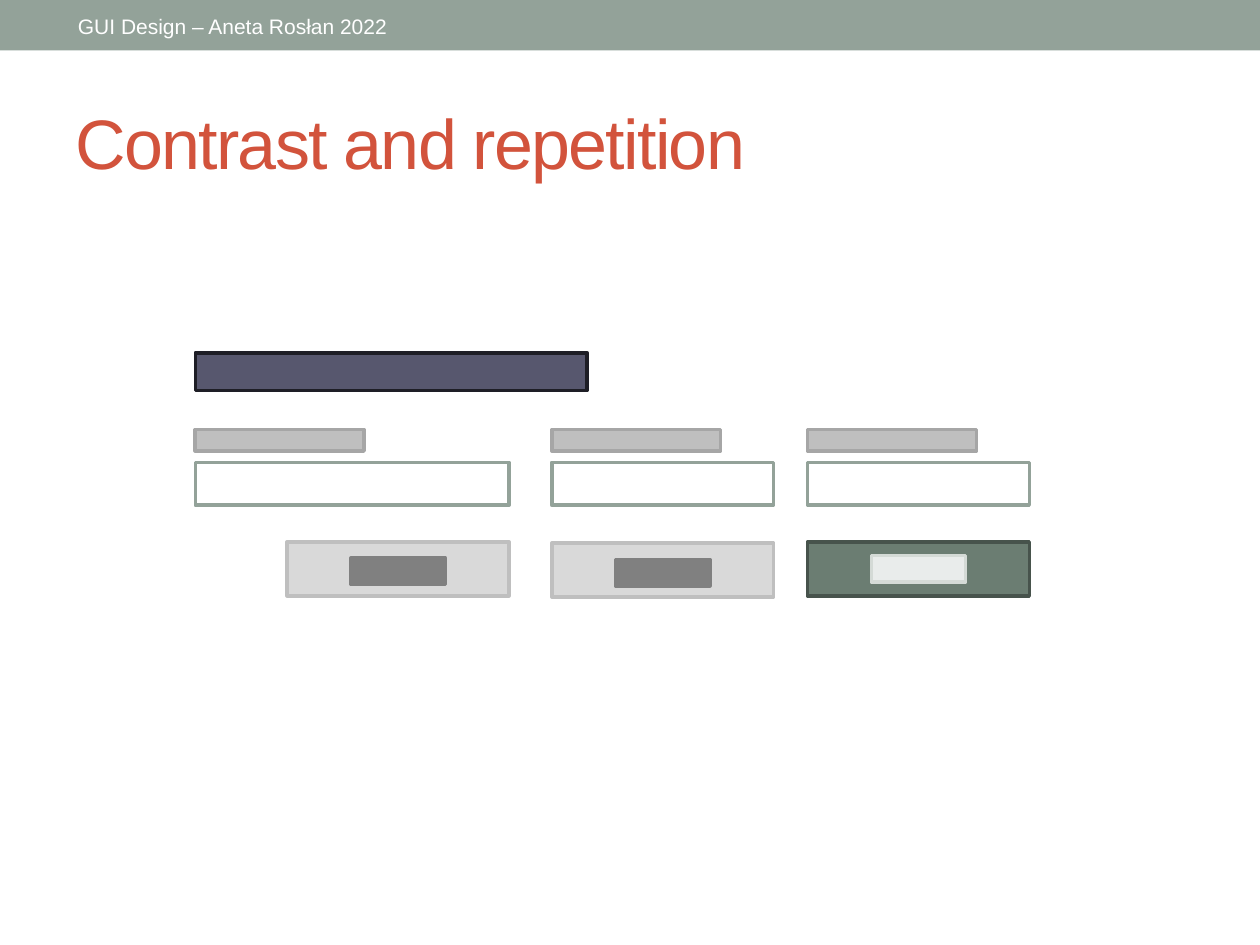
from typing import NamedTuple

from pptx import Presentation
from pptx.dml.color import RGBColor
from pptx.enum.shapes import MSO_SHAPE
from pptx.enum.text import MSO_ANCHOR, PP_ALIGN
from pptx.util import Inches, Pt

RECT = MSO_SHAPE.RECTANGLE
MIDDLE = MSO_ANCHOR.MIDDLE
LEFT = PP_ALIGN.LEFT
TITLE_ONLY = 5
SAGE = "93A299"


class Style(NamedTuple):
    fill: str
    line: str | None = None


class Field(NamedTuple):
    left: float
    width: float


class Button(NamedTuple):
    left: float
    top: float
    label_top: float
    style: Style
    label_style: Style


BAND = Style(SAGE)
HEADING = Style("57576E", "1E1E26")
LABEL = Style("BFBFBF", "A6A6A6")
INPUT = Style("FFFFFF", SAGE)
PLAIN = Style("D9D9D9", "BFBFBF")
PLAIN_LABEL = Style("808080", "808080")
PRIMARY = Style("6B7D72", "47534C")
PRIMARY_LABEL = Style("E9ECEB", "D4DAD6")

BUTTON_W, BUTTON_H = 1.76, 0.43
CAPTION_W, CAPTION_H = 0.75, 0.21

FIELDS = [Field(1.55, 2.49), Field(4.38, BUTTON_W), Field(6.41, BUTTON_W)]
BUTTONS = [
    Button(2.28, 4.3, 4.43, PLAIN, PLAIN_LABEL),
    Button(4.38, 4.31, 4.44, PLAIN, PLAIN_LABEL),
    Button(6.41, 4.3, 4.41, PRIMARY, PRIMARY_LABEL),
]


def rgb(color: str) -> RGBColor:
    return RGBColor.from_string(color)


def add_rect(slide, left: float, top: float, width: float, height: float, style: Style):
    sp = slide.shapes.add_shape(
        RECT, Inches(left), Inches(top), Inches(width), Inches(height)
    )
    sp.shadow.inherit = False
    sp.fill.solid()
    sp.fill.fore_color.rgb = rgb(style.fill)
    if style.line:
        sp.line.color.rgb = rgb(style.line)
        sp.line.width = Pt(2)
    else:
        sp.line.fill.background()
    return sp


def set_text(sp, text: str, size: int, color: str):
    tf = sp.text_frame
    tf.word_wrap = True
    tf.vertical_anchor = MIDDLE
    p = tf.paragraphs[0]
    p.alignment = LEFT
    r = p.add_run()
    r.text = text
    for name, value in {"name": "Arial", "size": Pt(size)}.items():
        setattr(r.font, name, value)
    r.font.color.rgb = rgb(color)
    return r


def add_field(slide, field: Field) -> None:
    add_rect(slide, field.left, 3.67, field.width, 0.34, INPUT)
    add_rect(slide, field.left, 3.41, 1.34, 0.17, LABEL)


def add_button(slide, button: Button) -> None:
    add_rect(slide, button.left, button.top, BUTTON_W, BUTTON_H, button.style)
    left = button.left + (BUTTON_W - CAPTION_W) / 2
    add_rect(slide, left, button.label_top, CAPTION_W, CAPTION_H, button.label_style)


def main() -> None:
    prs = Presentation()
    prs.slide_width, prs.slide_height = Inches(10), Inches(7.5)
    slide = prs.slides.add_slide(prs.slide_layouts[TITLE_ONLY])

    add_rect(slide, 0, 0, 10, 0.4, BAND)
    header = add_rect(slide, 0.52, 0.06, 3.15, 0.3, BAND)
    set_text(header, "GUI Design – Aneta Rosłan 2022", 12, "FFFFFF")

    title = slide.shapes.title
    box = {"left": 0.5, "top": 0.58, "width": 9, "height": 1.08}
    for name, value in box.items():
        setattr(title, name, Inches(value))
    r = set_text(title, "Contrast and repetition", 40, "D2533C")
    r.font._element.set("spc", "-100")

    add_rect(slide, 1.55, 2.8, 3.11, 0.3, HEADING)
    for field in FIELDS:
        add_field(slide, field)
    for button in BUTTONS:
        add_button(slide, button)

    prs.save("out.pptx")


if __name__ == "__main__":
    main()
